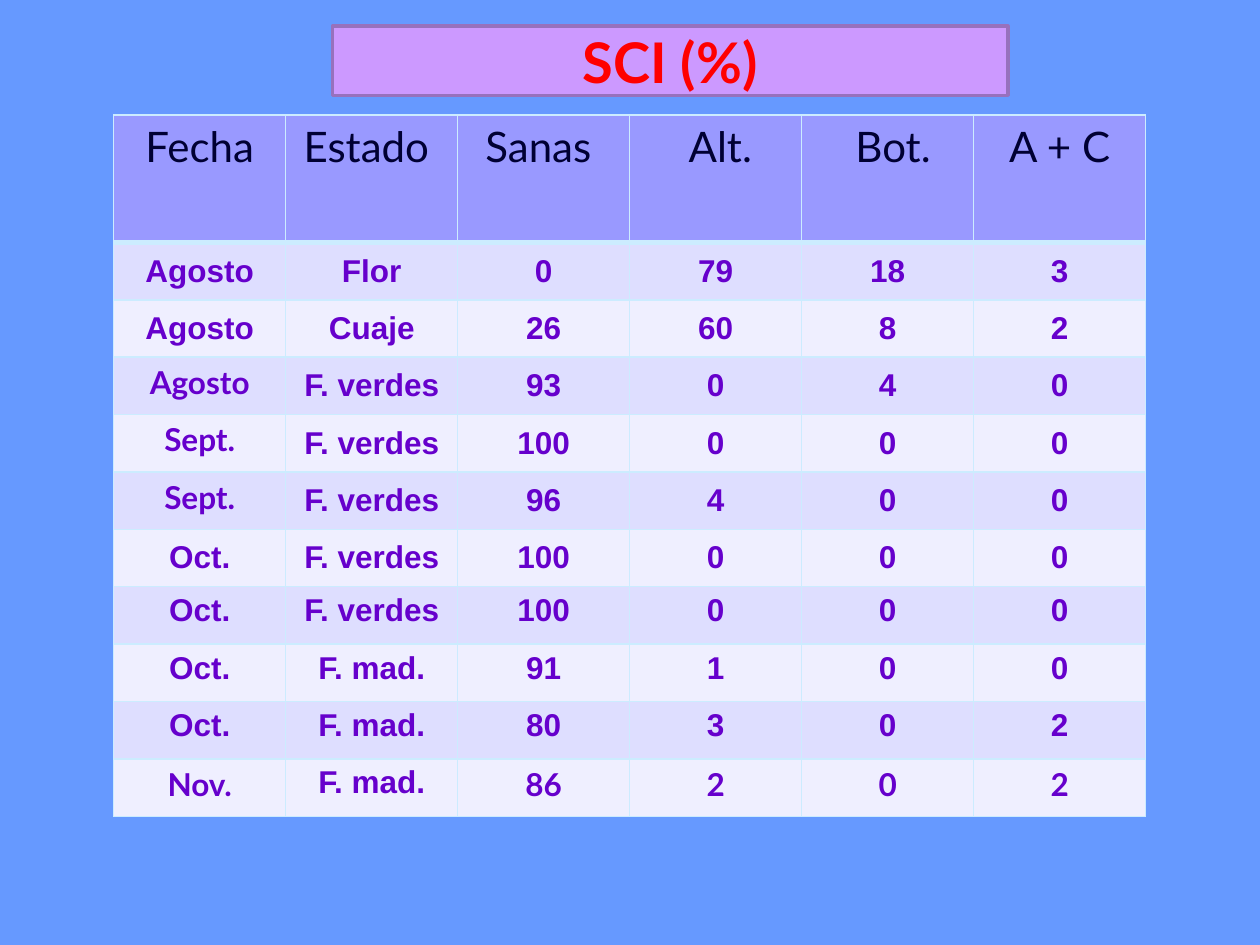
from lxml import etree
from pptx import Presentation
from pptx.dml.color import RGBColor
from pptx.enum import text
from pptx.oxml import ns
from pptx.util import Pt

SKY = RGBColor(0x66, 0x99, 0xFF)
LILAC = RGBColor(0xCC, 0x99, 0xFF)
MAUVE = RGBColor(0x97, 0x71, 0xBD)
RED = RGBColor(0xFF, 0x00, 0x00)
NAVY = RGBColor(0x00, 0x00, 0x33)
PURPLE = RGBColor(0x66, 0x00, 0xCC)
HEADER_FILL = RGBColor(0x99, 0x99, 0xFF)
BANDS = (RGBColor(0xDE, 0xDE, 0xFF), RGBColor(0xEF, 0xEF, 0xFF))
BORDER = RGBColor(0xCC, 0xEC, 0xFF)

HEADINGS = ("Fecha", "Estado ", "Sanas ", " Alt.", " Bot.", "A + C")
SAMPLES = (
    ("Agosto", "Flor", 0, 79, 18, 3),
    ("Agosto", "Cuaje", 26, 60, 8, 2),
    ("Agosto", "F. verdes", 93, 0, 4, 0),
    ("Sept.", "F. verdes", 100, 0, 0, 0),
    ("Sept.", "F. verdes", 96, 4, 0, 0),
    ("Oct.", "F. verdes", 100, 0, 0, 0),
    ("Oct.", "F. verdes", 100, 0, 0, 0),
    ("Oct.", "F. mad.", 91, 1, 0, 0),
    ("Oct.", "F. mad.", 80, 3, 0, 2),
    ("Nov.", "F. mad.", 86, 2, 0, 2),
)
LATO_DATE_ROWS = (3, 4, 5)
LAST_MIDDLE_ROW = 6
HEADER_HEIGHT, ROW_HEIGHT, COLUMN_WIDTH = 72.8, 32.8, 98.3


def write(frame, wording, font_name, size, color, bold):
    frame.text = wording
    paragraph = frame.paragraphs[0]
    paragraph.alignment = text.PP_ALIGN.CENTER
    font = paragraph.font
    font.name, font.size, font.bold = font_name, Pt(size), bold
    font.color.rgb = color


def add_border(cell, side, width):
    """Draw one cell edge; side is L, R, T or B, in that order."""
    line = etree.SubElement(cell._tc.get_or_add_tcPr(), ns.qn(f"a:ln{side}"), w=str(Pt(width)))
    solid = etree.SubElement(line, ns.qn("a:solidFill"))
    etree.SubElement(solid, ns.qn("a:srgbClr"), val=str(BORDER))


def style_cell(cell, row, fill):
    heavy_side = {0: "B", 1: "T"}.get(row)
    for side in "LRTB":
        add_border(cell, side, 3 if side == heavy_side else 1)
    cell.fill.solid()
    cell.fill.fore_color.rgb = fill


def fill_header(table):
    for column, heading in enumerate(HEADINGS):
        cell = table.cell(0, column)
        style_cell(cell, 0, HEADER_FILL)
        write(cell.text_frame, heading, "Lato", 24, NAVY, False)


def fill_sample(table, row, sample):
    for column, value in enumerate(sample):
        cell = table.cell(row, column)
        style_cell(cell, row, BANDS[(row - 1) % 2])
        lato_date = column == 0 and row in LATO_DATE_ROWS
        lato_total = row == len(SAMPLES) and column != 1
        font_name = "Lato" if lato_date or lato_total else "Arial"
        write(cell.text_frame, str(value), font_name, 18, PURPLE, True)
        if row <= LAST_MIDDLE_ROW and not lato_date:
            cell.vertical_anchor = text.MSO_ANCHOR.MIDDLE


def add_samples_table(slide):
    rows, columns = len(SAMPLES) + 1, len(HEADINGS)
    table = slide.shapes.add_table(
        rows, columns, Pt(65), Pt(65.7),
        Pt(COLUMN_WIDTH * columns), Pt(HEADER_HEIGHT + ROW_HEIGHT * len(SAMPLES)),
    ).table
    table.first_row = table.horz_banding = False
    for column in table.columns:
        column.width = Pt(COLUMN_WIDTH)
    for row in table.rows:
        row.height = Pt(ROW_HEIGHT)
    table.rows[0].height = Pt(HEADER_HEIGHT)
    fill_header(table)
    for row, sample in enumerate(SAMPLES, start=1):
        fill_sample(table, row, sample)


def format_title(title):
    title.left, title.top, title.width, title.height = Pt(190), Pt(15), Pt(386), Pt(39.5)
    title.fill.solid()
    title.fill.fore_color.rgb = LILAC
    title.line.color.rgb = MAUVE
    title.line.width = Pt(2)
    frame = title.text_frame
    frame.auto_size = text.MSO_AUTO_SIZE.NONE
    frame.vertical_anchor = text.MSO_ANCHOR.MIDDLE
    write(frame, "SCI (%)", "Lato", 32, RED, True)


def main():
    deck = Presentation()
    deck.slide_width, deck.slide_height = Pt(720), Pt(540)
    slide = deck.slides.add_slide(deck.slide_layouts.get_by_name("Title Only"))
    slide.background.fill.solid()
    slide.background.fill.fore_color.rgb = SKY
    format_title(slide.shapes.title)
    add_samples_table(slide)
    deck.save("out.pptx")


if __name__ == "__main__":
    main()
